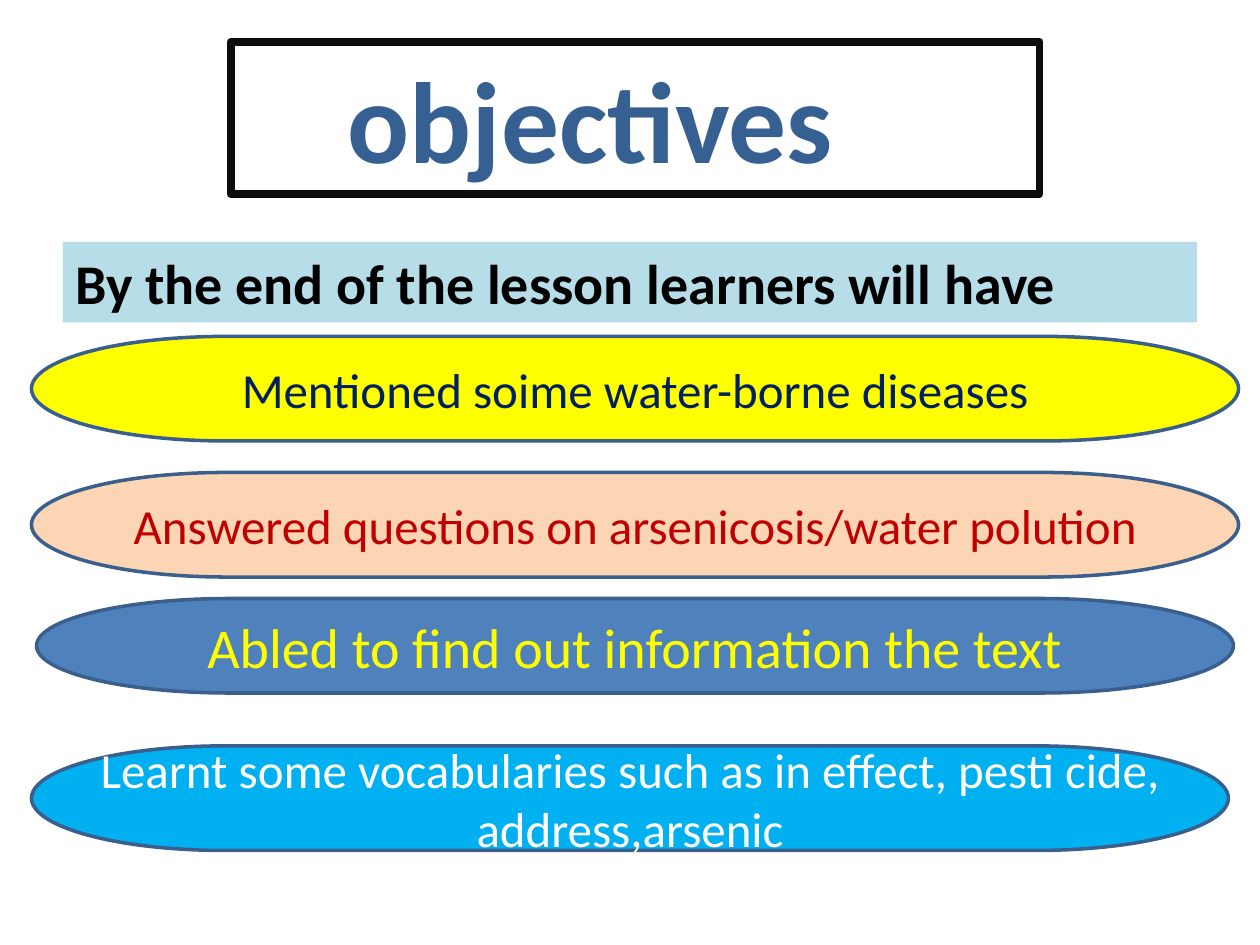
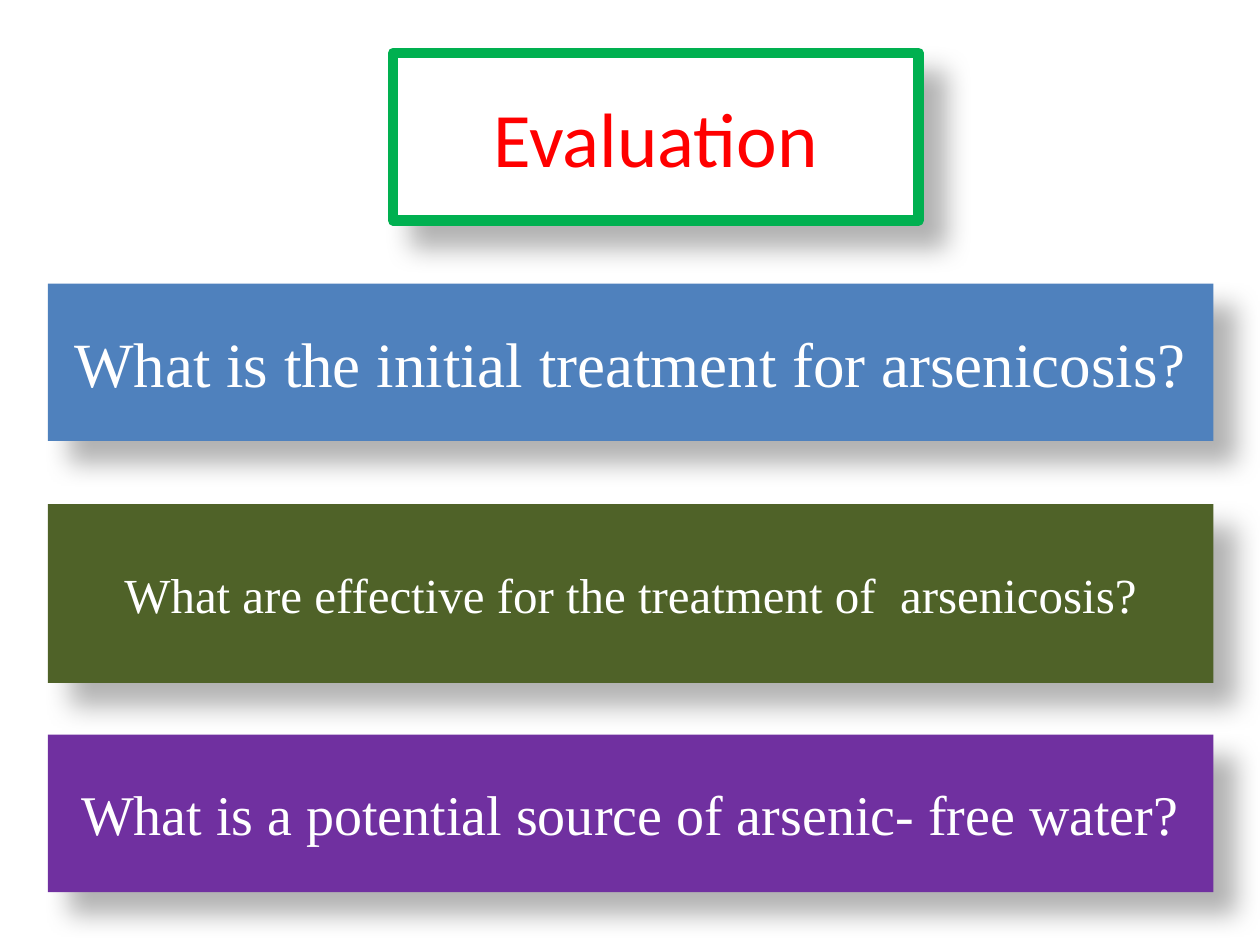
from dataclasses import dataclass

from lxml.etree import SubElement
from pptx import Presentation
from pptx.dml.color import RGBColor
from pptx.enum.shapes import MSO_SHAPE
from pptx.enum.text import MSO_ANCHOR, MSO_AUTO_SIZE, PP_ALIGN
from pptx.oxml.ns import qn
from pptx.util import Inches, Pt


@dataclass(frozen=True)
class Theme:
    sans: str = "Calibri"
    serif: str = "Times New Roman"
    black: str = "000000"
    white: str = "FFFFFF"
    blue: str = "4F81BD"
    edge: str = "3A5F8C"
    ink: str = "0D0D0D"
    title: str = "376092"
    pale: str = "B7DEE8"
    yellow: str = "FFFF00"
    navy: str = "002060"
    peach: str = "FCD5B5"
    brick: str = "C00000"
    sky: str = "00B0F0"
    green: str = "00B050"
    red: str = "FF0000"
    olive: str = "4F6228"
    purple: str = "7030A0"
    huge: int = 66
    head: int = 44
    large: int = 36
    mid: int = 32
    small: int = 28


def dress(shape, text, size, color, fill=None, line=None, width=0,
          font=None, align=PP_ALIGN.CENTER, anchor=MSO_ANCHOR.MIDDLE, bold=False):
    """Fill, outline and label a shape, without any shadow."""
    shape.shadow.inherit = False
    if fill:
        shape.fill.solid()
        shape.fill.fore_color.rgb = RGBColor.from_string(fill)
    else:
        shape.fill.background()
    if line:
        shape.line.color.rgb = RGBColor.from_string(line)
        shape.line.width = Pt(width)
    else:
        shape.line.fill.background()
    frame = shape.text_frame
    frame.text = text
    frame.word_wrap = True
    frame.auto_size = MSO_AUTO_SIZE.NONE
    frame.vertical_anchor = anchor
    para = frame.paragraphs[0]
    para.alignment = align
    face = para.runs[0].font
    face.name = font or theme.sans
    face.size = Pt(size)
    face.bold = bold
    face.color.rgb = RGBColor.from_string(color)


def cast(shape):
    """Give a dressed shape a soft shadow to its lower right."""
    effects = shape._element.spPr.find(qn("a:effectLst"))
    outer = SubElement(effects, qn("a:outerShdw"), blurRad=str(Pt(15)),
                       dist=str(Pt(18)), dir=str(45 * 60000),
                       algn="tl", rotWithShape="0")
    tint = SubElement(outer, qn("a:srgbClr"), val=theme.black)
    SubElement(tint, qn("a:alpha"), val="30000")


theme = Theme()
deck = Presentation()
deck.slide_width, deck.slide_height = Inches(10), Inches(7.5)
layout = deck.slide_layouts[5]

# Slide 1: objectives
slide = deck.slides.add_slide(layout)
title = slide.shapes.title
title.left, title.top = Inches(1.83), Inches(0.33)
title.width, title.height = Inches(6.42), Inches(1.21)
dress(title, "objectives", theme.huge, theme.title, line=theme.ink, width=4.5,
      align=PP_ALIGN.LEFT, anchor=MSO_ANCHOR.TOP, bold=True)
title.text_frame.margin_left = Inches(0.93)

intro = slide.shapes.add_textbox(Inches(0.5), Inches(1.92), Inches(9), Inches(0.64))
dress(intro, "By the end of the lesson learners will have", theme.mid, theme.black,
      theme.pale, align=PP_ALIGN.LEFT, anchor=MSO_ANCHOR.TOP, bold=True)

goals = [
    (0.25, 2.67, 9.58, 0.83, "Mentioned soime water-borne diseases",
     theme.small, theme.navy, theme.yellow),
    (0.25, 3.75, 9.58, 0.83, "Answered questions on arsenicosis/water polution",
     theme.small, theme.brick, theme.peach),
    (0.29, 4.75, 9.5, 0.75, "Abled to find out information the text",
     theme.mid, theme.yellow, theme.blue),
    (0.25, 5.92, 9.5, 0.83,
     "Learnt some vocabularies such as in effect, pesti cide, address,arsenic",
     theme.small, theme.white, theme.sky),
]
for left, top, width, height, text, size, color, fill in goals:
    pill = slide.shapes.add_shape(MSO_SHAPE.FLOWCHART_TERMINATOR, Inches(left),
                                  Inches(top), Inches(width), Inches(height))
    dress(pill, text, size, color, fill, theme.edge, 2)

# Slide 2: evaluation
slide = deck.slides.add_slide(layout)
title = slide.shapes.title
title.left, title.top = Inches(3.12), Inches(0.42)
title.width, title.height = Inches(4.17), Inches(1.33)
oval = SubElement(title._element.spPr, qn("a:prstGeom"), prst="ellipse")
SubElement(oval, qn("a:avLst"))
dress(title, "Evaluation", theme.head, theme.red, theme.white, theme.green, 6)
cast(title)

asks = [
    (2.25, 1.25, "What is the initial treatment for arsenicosis?",
     theme.large, theme.blue),
    (4, 1.42, "What are effective for the treatment of  arsenicosis?",
     theme.small, theme.olive),
    (5.83, 1.25, "What is a potential source of arsenic- free water?",
     theme.mid, theme.purple),
]
for top, height, text, size, fill in asks:
    band = slide.shapes.add_shape(MSO_SHAPE.RECTANGLE, Inches(0.38), Inches(top),
                                  Inches(9.25), Inches(height))
    dress(band, text, size, theme.white, fill, font=theme.serif)
    cast(band)

deck.save("out.pptx")
